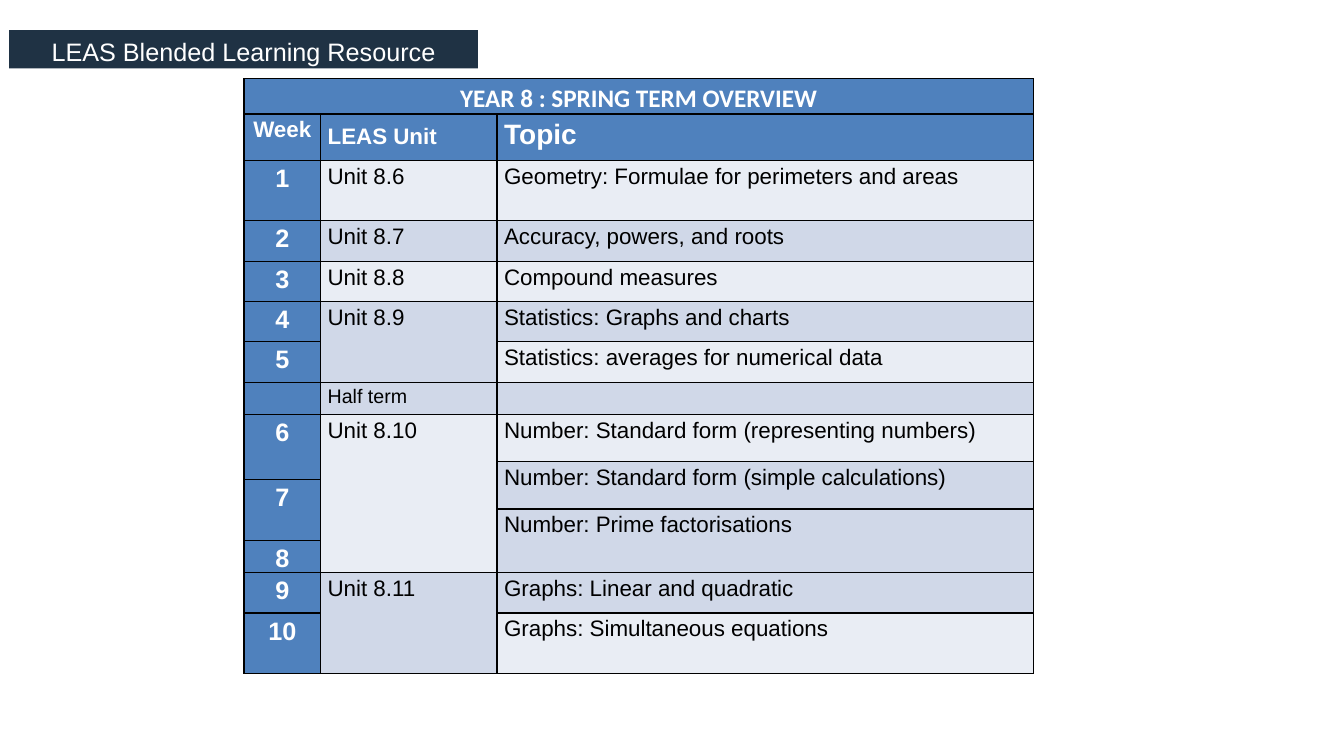
from dataclasses import dataclass
from lxml.etree import SubElement
from pptx import Presentation
from pptx.dml.color import RGBColor
from pptx.enum.text import MSO_ANCHOR, MSO_AUTO_SIZE, PP_ALIGN
from pptx.oxml.ns import qn
from pptx.util import Inches, Pt


@dataclass(frozen=True)
class Theme:
    banner: str = "1F3244"
    head: str = "4F81BD"
    light: str = "E9EDF4"
    dark: str = "D0D8E8"
    white: str = "FFFFFF"
    black: str = "000000"
    font: str = "Arial"
    title_font: str = "Calibri"
    topic_size: int = 20
    week_size: int = 18
    body_size: int = 16
    break_size: int = 14
    border: float = 1


T = Theme()
BANNER = "LEAS Blended Learning Resource"
OVERVIEW = "YEAR 8 : SPRING TERM OVERVIEW"
HEADINGS = [
    [("Week", T.body_size)],
    [("LEAS Unit ", T.body_size), (" ", T.topic_size)],
    [("Topic", T.topic_size)],
]
WEEKS = [
    (2, 1, "1"), (3, 1, "2"), (4, 1, "3"), (5, 1, "4"), (6, 1, "5"), (7, 1, ""),
    (8, 2, "6"), (10, 2, "7"), (12, 1, "8"), (13, 1, "9"), (14, 1, "10"),
]
UNITS = [
    (2, 1, "Unit 8.6", T.light),
    (3, 1, "Unit 8.7", T.dark),
    (4, 1, "Unit 8.8", T.light),
    (5, 2, "Unit 8.9", T.dark),
    (7, 1, "Half term", T.dark),
    (8, 5, "Unit 8.10", T.light),
    (13, 2, "Unit 8.11", T.dark),
]
TOPICS = [
    (2, 1, "Geometry: Formulae for perimeters and areas", T.light),
    (3, 1, "Accuracy, powers, and roots", T.dark),
    (4, 1, "Compound measures", T.light),
    (5, 1, "Statistics: Graphs and charts", T.dark),
    (6, 1, "Statistics: averages for numerical data", T.light),
    (7, 1, "", T.dark),
    (8, 1, "Number: Standard form (representing numbers)", T.light),
    (9, 2, "Number: Standard form (simple calculations)", T.dark),
    (11, 2, "Number: Prime factorisations", T.dark),
    (13, 1, "Graphs: Linear and quadratic", T.dark),
    (14, 1, "Graphs: Simultaneous equations", T.light),
]
COLS = [0.76, 1.75, 5.32]
ROWS = [0.35, 0.46, 0.6, 0.4, 0.4, 0.4, 0.4, 0.32,
        0.47, 0.18, 0.29, 0.31, 0.31, 0.4, 0.6]


def add_run(p, text, size, color, bold=False, font=T.font):
    r = p.add_run()
    r.text = text
    r.font.name, r.font.size, r.font.bold = font, Pt(size), bold
    r.font.color.rgb = RGBColor.from_string(color)


def style_cell(cell, fill):
    tcPr = cell._tc.get_or_add_tcPr()
    for side in ("a:lnL", "a:lnR", "a:lnT", "a:lnB"):
        ln = SubElement(tcPr, qn(side), w=str(Pt(T.border)))
        SubElement(SubElement(ln, qn("a:solidFill")), qn("a:srgbClr"), val=T.black)
    cell.fill.solid()
    cell.fill.fore_color.rgb = RGBColor.from_string(fill)
    cell.margin_left = cell.margin_right = Inches(0.07)
    cell.margin_top = cell.margin_bottom = 0


def put(tbl, row, col, runs, fill, rows=1, cols=1, color=T.white, bold=True,
        font=T.font, center=False):
    for i in range(row, row + rows):
        for j in range(col, col + cols):
            style_cell(tbl.cell(i, j), fill)
    cell = tbl.cell(row, col)
    if rows * cols > 1:
        cell.merge(tbl.cell(row + rows - 1, col + cols - 1))
    p = cell.text_frame.paragraphs[0]
    p.alignment = PP_ALIGN.CENTER if center else PP_ALIGN.LEFT
    p.line_spacing, p.space_after = 1.15, Pt(10)
    for text, size in runs:
        if text:
            add_run(p, text, size, color, bold, font)


def add_banner(s):
    sp = s.shapes.title
    sp.left, sp.top, sp.width, sp.height = map(Inches, (0.09, 0.3, 4.65, 0.38))
    sp.fill.solid()
    sp.fill.fore_color.rgb = RGBColor.from_string(T.banner)
    tf = sp.text_frame
    tf.word_wrap, tf.auto_size = True, MSO_AUTO_SIZE.NONE
    tf.vertical_anchor = MSO_ANCHOR.MIDDLE
    tf.margin_top, tf.margin_bottom = Inches(0.04), 0
    p = tf.paragraphs[0]
    p.alignment = PP_ALIGN.CENTER
    add_run(p, BANNER, T.week_size, T.white)


def add_overview(s):
    frame = s.shapes.add_table(len(ROWS), len(COLS), Inches(2.42), Inches(0.78),
                               Inches(sum(COLS)), Inches(sum(ROWS)))
    tbl = frame.table
    tbl.first_row = tbl.horz_banding = False
    for col, width in zip(tbl.columns, COLS):
        col.width = Inches(width)
    for row, height in zip(tbl.rows, ROWS):
        row.height = Inches(height)
    put(tbl, 0, 0, [(OVERVIEW, T.week_size)], T.head, cols=len(COLS),
        font=T.title_font, center=True)
    for col, runs in enumerate(HEADINGS):
        put(tbl, 1, col, runs, T.head, center=col == 0)
    for row, span, week in WEEKS:
        put(tbl, row, 0, [(week, T.week_size)], T.head, span, center=True)
    for col, entries in ((1, UNITS), (2, TOPICS)):
        for row, span, text, fill in entries:
            size = T.break_size if text == "Half term" else T.body_size
            put(tbl, row, col, [(text, size)], fill, span, color=T.black, bold=False)


def main():
    prs = Presentation()
    prs.slide_width, prs.slide_height = Inches(13.33), Inches(7.5)
    s = prs.slides.add_slide(prs.slide_layouts[5])
    add_banner(s)
    add_overview(s)
    prs.save("out.pptx")


if __name__ == "__main__":
    main()
